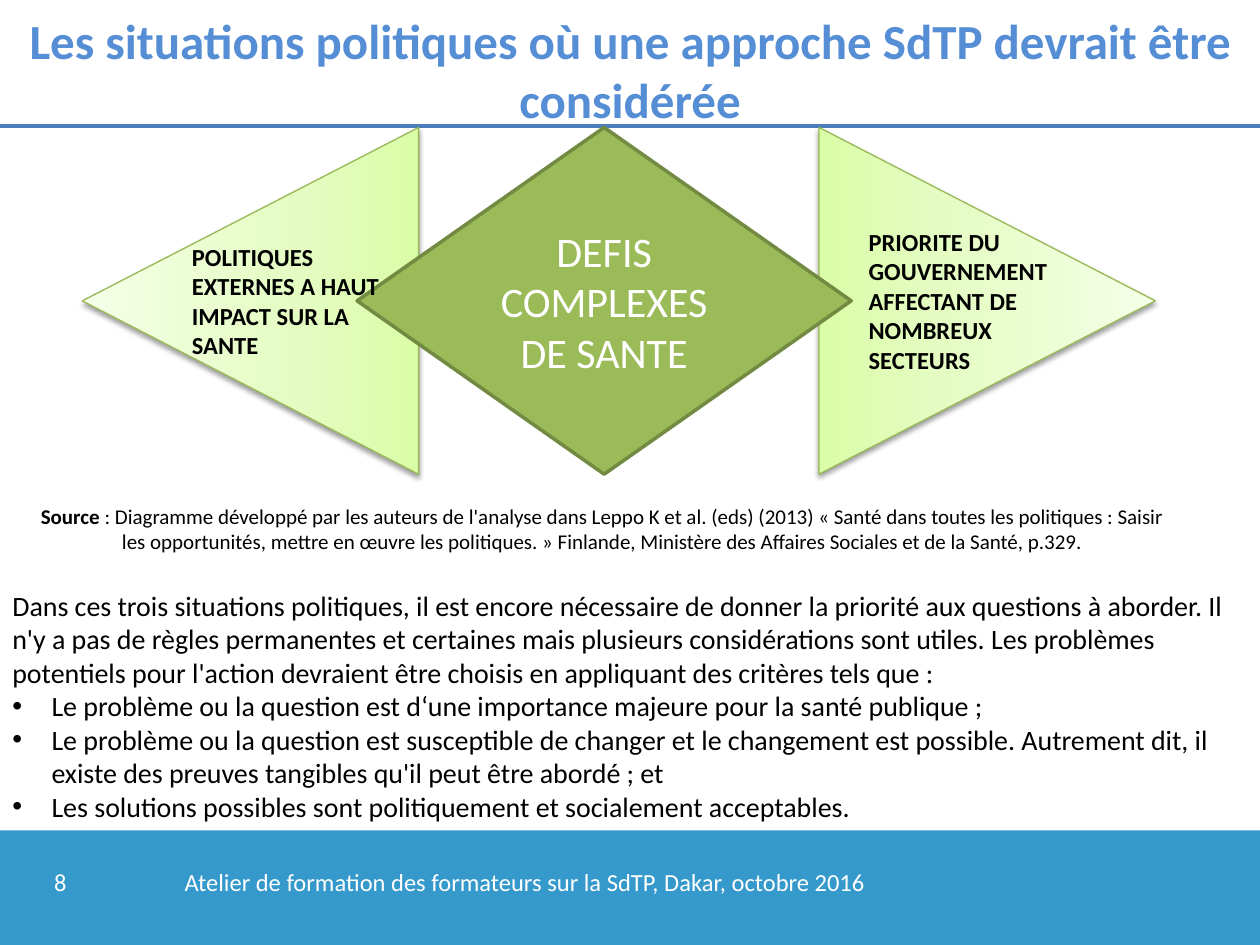
from copy import deepcopy

from lxml import etree
from pptx import Presentation
from pptx import util as u
from pptx.dml.color import RGBColor
from pptx.enum import shapes, text
from pptx.oxml.ns import qn

FONT = "Calibri"
LEFT, MID = text.PP_ALIGN.LEFT, text.PP_ALIGN.CENTER
TOP, CORE = text.MSO_ANCHOR.TOP, text.MSO_ANCHOR.MIDDLE
KIND = shapes.MSO_SHAPE
STOPS = [(0, "DAFDA7"), (0.35, "E4FCC2"), (1, "F5FFE7")]

TITLE = "Les situations politiques où une approche SdTP devrait être considérée"
FOOT = "Atelier de formation des formateurs sur la SdTP, Dakar, octobre 2016"
SOURCE = (": Diagramme développé par les auteurs de l'analyse dans Leppo K et al. (eds) (2013) "
          "« Santé dans toutes les politiques : Saisir les opportunités, mettre en œuvre "
          "les politiques. » Finlande, Ministère des Affaires Sociales et de la Santé, p.329.")
INTRO = ("Dans ces trois situations politiques, il est encore nécessaire de donner la priorité "
         "aux questions à aborder. Il n'y a pas de règles permanentes et certaines mais plusieurs "
         "considérations sont utiles. Les problèmes potentiels pour l'action devraient être "
         "choisis en appliquant des critères tels que :")
POINTS = [
    "Le problème ou la question est d‘une importance majeure pour la santé publique ;",
    "Le problème ou la question est susceptible de changer et le changement est possible. "
    "Autrement dit, il existe des preuves tangibles qu'il peut être abordé ; et",
    "Les solutions possibles sont politiquement et socialement acceptables.",
]


def rgb(code):
    return RGBColor.from_string(code)


def dims(box):
    return [u.Cm(n) for n in box]


def add(parent, tag, **attrs):
    return etree.SubElement(parent, qn(tag), attrs)


def bullet(para):
    props = para._p.get_or_add_pPr()
    gap = u.Cm(0.79)
    props.set("marL", str(gap))
    props.set("indent", str(-gap))
    add(props, "a:buFont", typeface="Arial")
    add(props, "a:buChar", char="•")


def write(shape, lines, size=14, color="000000", bold=False, align=LEFT,
          anchor=TOP, lead="", marks=False):
    """Fill a shape with paragraphs; lead is a bold opening, marks bullets all but the first."""
    frame = shape.text_frame
    frame.word_wrap = True
    frame.auto_size = text.MSO_AUTO_SIZE.NONE
    frame.vertical_anchor = anchor
    for i, line in enumerate(lines):
        para = frame.add_paragraph() if i else frame.paragraphs[0]
        para.alignment = align
        if marks and i:
            bullet(para)
        for words, heavy in ((lead, True), (line, bold)):
            if words:
                run = para.add_run()
                run.text = words
                font = run.font
                font.name, font.size, font.bold = FONT, u.Pt(size), heavy
                font.color.rgb = rgb(color)


def label(slide, box, lines, **style):
    write(slide.shapes.add_textbox(*dims(box)), lines, **style)


def draw(slide, kind, box, fill=None, edge=None, width=1):
    shape = slide.shapes.add_shape(kind, *dims(box))
    shape.shadow.inherit = False
    if fill:
        shape.fill.solid()
        shape.fill.fore_color.rgb = rgb(fill)
    if edge:
        shape.line.color.rgb = rgb(edge)
        shape.line.width = u.Pt(width)
    else:
        shape.line.fill.background()
    return shape


def arrow(slide, box, turn):
    """Triangle turned on its side, so that it fills the given box."""
    x, y, w, h = box
    shape = draw(slide, KIND.ISOSCELES_TRIANGLE,
                 (x + (w - h) / 2, y + (h - w) / 2, h, w), edge="98B955", width=0.75)
    shape.rotation = turn
    shape.fill.gradient()
    shape.fill.gradient_angle = 90
    props = shape._element.spPr
    row = props.find(".//" + qn("a:gsLst"))
    row.append(deepcopy(row[0]))
    for stop, (spot, code) in zip(shape.fill.gradient_stops, STOPS):
        stop.position = spot
        stop.color.rgb = rgb(code)
    shade = add(props.find(qn("a:effectLst")), "a:outerShdw", blurRad=str(u.Pt(3.1)),
                dist=str(u.Pt(1.6)), dir="5400000", rotWithShape="0")
    add(add(shade, "a:srgbClr", val="000000"), "a:alpha", val="38000")


def head(slide, box):
    x, y, w, h = box
    title = slide.shapes.title
    title.left, title.top, title.width, title.height = dims((x, y + 0.08, w, h + 0.1))
    write(title, [TITLE], size=28, color="558ED5", bold=True, align=MID)
    ends = dims((x, y + h, x + w, y + h))
    rule = slide.shapes.add_connector(shapes.MSO_CONNECTOR.STRAIGHT, *ends)
    rule.line.color.rgb = rgb("4B7EBC")
    rule.line.width = u.Pt(2.25)
    add(rule._element.spPr, "a:effectLst")


def chart(slide, box):
    """Diamond between two triangles that point outwards."""
    x, y, w, h = box
    side = 6.78
    arrow(slide, (x, y, side, h), 270)
    arrow(slide, (x + w - side, y, side, h), 90)
    core = draw(slide, KIND.FLOWCHART_DECISION, (x + 5.54, y, 9.96, h),
                fill="9BBB59", edge="738A42", width=2)
    write(core, ["DEFIS COMPLEXES DE SANTE"], size=24, color="FFFFFF",
          align=MID, anchor=CORE)
    label(slide, (x + 1.96, y + 2.18, 4.45, 2.64),
          ["POLITIQUES EXTERNES A HAUT IMPACT SUR LA SANTE"], bold=True)
    label(slide, (x + 15.6, y + 1.88, 4.45, 3.25),
          ["PRIORITE DU GOUVERNEMENT AFFECTANT DE NOMBREUX SECTEURS"], bold=True)


def foot(slide, box):
    x, y, w, h = box
    draw(slide, KIND.RECTANGLE, box, fill="3599CC")
    label(slide, (x + 0.84, y + 0.61, 2.11, 1.22), ["8"], color="FFFFFF")
    label(slide, (x + 3.18, y + 0.61, 14.81, 1.22), [FOOT], color="FFFFFF", align=MID)


def main():
    deck = Presentation()
    deck.slide_width, deck.slide_height = dims((25.4, 19.05))
    slide = deck.slides.add_slide(deck.slide_layouts[5])
    foot(slide, (0, 16.74, 25.4, 2.31))
    head(slide, (0, 0, 25.4, 2.54))
    chart(slide, (1.66, 2.57, 21.63, 6.99))
    label(slide, (0.3, 10.03, 23.7, 1.27), [SOURCE], size=12, align=MID, lead="Source ")
    label(slide, (0, 11.73, 25.4, 5.13), [INTRO, *POINTS], size=16, marks=True)
    deck.save("out.pptx")


if __name__ == "__main__":
    main()
